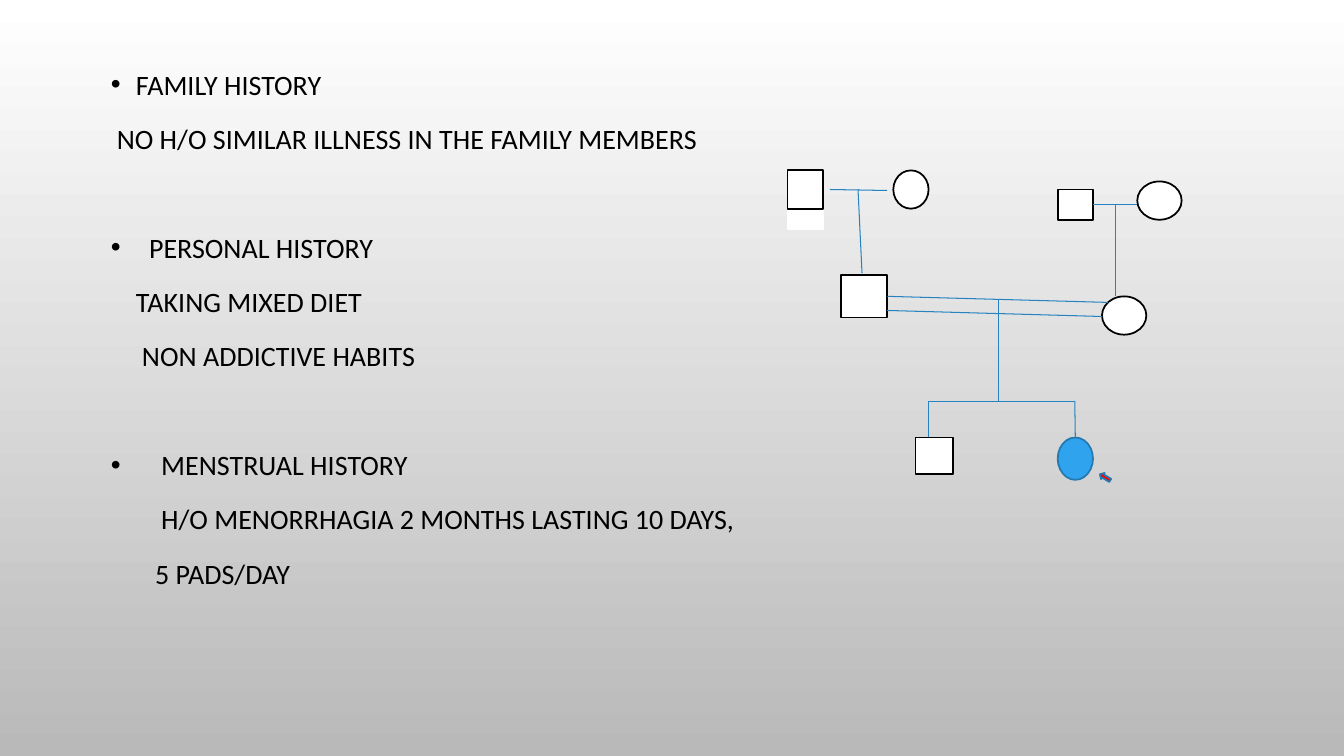
from dataclasses import dataclass

from lxml import etree
from pptx import Presentation
from pptx.dml.color import RGBColor
from pptx.enum.shapes import MSO_CONNECTOR, MSO_SHAPE
from pptx.oxml.ns import qn
from pptx.util import Inches, Pt

MALE = MSO_SHAPE.FLOWCHART_PROCESS
FEMALE = MSO_SHAPE.OVAL
ARROW = MSO_SHAPE.RIGHT_ARROW
STRAIGHT = MSO_CONNECTOR.STRAIGHT
TOP, RIGHT = 0, 3


@dataclass(frozen=True)
class Theme:
    font: str = "Calibri"
    text_size: float = 20
    line_spacing: float = 1.2
    paragraph_gap: float = 10
    section_gap: float = 48.9
    text: str = "000000"
    white: str = "FFFFFF"
    background_end: str = "B9B9B9"
    relation: str = "2683BF"
    affected: str = "2FA3EE"
    affected_outline: str = "2379B0"
    pointer: str = "FF0000"
    outline_width: float = 1.25
    relation_width: float = 0.75


THEME = Theme()

HISTORY = [
    (0.25, "FAMILY HISTORY", [(0.06, "NO H/O SIMILAR ILLNESS IN THE FAMILY MEMBERS")]),
    (0.38, "PERSONAL HISTORY", [(0.25, "TAKING MIXED DIET"),
                                (0.31, "NON ADDICTIVE HABITS")]),
    (0.5, "MENSTRUAL HISTORY", [(0.5, "H/O MENORRHAGIA 2 MONTHS LASTING 10 DAYS,"),
                                (0.44, "5 PADS/DAY")]),
]

UNAFFECTED = (THEME.white, THEME.text)
MEMBERS = [
    ("grandfather shade", MALE, (0, 0.2, 0.35, 0.38), (THEME.white, THEME.white)),
    ("paternal grandfather", MALE, (0, 0, 0.35, 0.38), UNAFFECTED),
    ("paternal grandmother", FEMALE, (1.05, 0, 0.35, 0.38), UNAFFECTED),
    ("father", MALE, (0.53, 1.04, 0.46, 0.42), UNAFFECTED),
    ("maternal grandfather", MALE, (2.68, 0.19, 0.35, 0.3), UNAFFECTED),
    ("maternal grandmother", FEMALE, (3.47, 0.11, 0.44, 0.38), UNAFFECTED),
    ("mother", FEMALE, (3.12, 1.25, 0.44, 0.38), UNAFFECTED),
    ("son", MALE, (1.27, 2.65, 0.37, 0.36), UNAFFECTED),
    ("daughter", FEMALE, (2.68, 2.65, 0.35, 0.42), (THEME.affected, THEME.affected_outline)),
    ("patient pointer", ARROW, (3.09, 3.01, 0.12, 0.07), (THEME.pointer, THEME.affected_outline)),
]

SIBLING_Y = 2.29
SON_X, PARENTS_X, DAUGHTER_X = 1.4, 2.09, 2.85
RELATIONS = [
    ((0.99, 0.2), (0.42, 0.19), None, None),
    ((0.7, 0.19), (0.74, 1.02), None, None),
    ((3.03, 0.34), (3.47, 0.34), ("maternal grandfather", RIGHT), None),
    ((3.25, 0.34), (3.25, 1.25), None, None),
    ((0.99, 1.25), (3.18, 1.31), ("father", RIGHT), None),
    ((0.99, 1.39), (3.12, 1.45), None, None),
    ((PARENTS_X, 1.28), (PARENTS_X, SIBLING_Y), None, None),
    ((PARENTS_X, SIBLING_Y), (DAUGHTER_X, SIBLING_Y), None, None),
    ((PARENTS_X, SIBLING_Y), (SON_X, SIBLING_Y), None, None),
    ((SON_X, SIBLING_Y), (SON_X, 2.65), None, None),
    ((DAUGHTER_X, SIBLING_Y), (DAUGHTER_X, 2.65), None, ("daughter", TOP)),
]


def color(value):
    return RGBColor.from_string(value)


def set_background(slide):
    fill = slide.background.fill
    fill.gradient()
    fill.gradient_angle = 270
    stops = zip(fill.gradient_stops, (THEME.white, THEME.background_end), (0, 1))
    for stop, value, position in stops:
        stop.color.rgb = color(value)
        stop.position = position


def add_line(frame, text, margin, gap, bullet=False):
    first = not frame.paragraphs[0].runs
    paragraph = frame.paragraphs[0] if first else frame.add_paragraph()
    properties = paragraph._p.get_or_add_pPr()
    properties.set("marL", str(Inches(margin)))
    if bullet:
        properties.set("indent", str(-Inches(margin)))
        bullet_color = etree.SubElement(properties, qn("a:buClr"))
        etree.SubElement(bullet_color, qn("a:srgbClr"), val=THEME.text)
        etree.SubElement(properties, qn("a:buFont"), typeface="Arial")
        etree.SubElement(properties, qn("a:buChar"), char="•")
    paragraph.line_spacing = THEME.line_spacing
    paragraph.space_before = Pt(0 if first else gap)
    run = paragraph.add_run()
    run.text = text
    run.font.name = THEME.font
    run.font.size = Pt(THEME.text_size)
    run.font.color.rgb = color(THEME.text)


def add_history(slide, left, top, width, height):
    box = slide.shapes.add_textbox(Inches(left), Inches(top), Inches(width), Inches(height))
    frame = box.text_frame
    frame.word_wrap = True
    for heading_margin, heading, details in HISTORY:
        add_line(frame, heading, heading_margin, THEME.section_gap, bullet=True)
        for margin, detail in details:
            add_line(frame, detail, margin, THEME.paragraph_gap)


def add_pedigree(slide, left, top):
    members = {}
    for name, kind, (x, y, width, height), (fill, outline) in MEMBERS:
        shape = slide.shapes.add_shape(
            kind, Inches(left + x), Inches(top + y), Inches(width), Inches(height))
        shape.shadow.inherit = False
        shape.fill.solid()
        shape.fill.fore_color.rgb = color(fill)
        shape.line.color.rgb = color(outline)
        shape.line.width = Pt(THEME.outline_width)
        members[name] = shape
    members["patient pointer"].rotation = 210.8

    for (x1, y1), (x2, y2), begin, end in RELATIONS:
        connector = slide.shapes.add_connector(
            STRAIGHT, Inches(left + x1), Inches(top + y1), Inches(left + x2), Inches(top + y2))
        connector.line.color.rgb = color(THEME.relation)
        connector.line.width = Pt(THEME.relation_width)
        etree.SubElement(connector._element.spPr, qn("a:effectLst"))
        if begin:
            connector.begin_connect(members[begin[0]], begin[1])
        if end:
            connector.end_connect(members[end[0]], end[1])


def main():
    presentation = Presentation()
    presentation.slide_width = Inches(13.33)
    presentation.slide_height = Inches(7.5)
    slide = presentation.slides.add_slide(presentation.slide_layouts[6])
    set_background(slide)
    add_history(slide, 1, 0.55, 12.09, 6.31)
    add_pedigree(slide, 7.81, 1.69)
    presentation.save("out.pptx")


if __name__ == "__main__":
    main()
